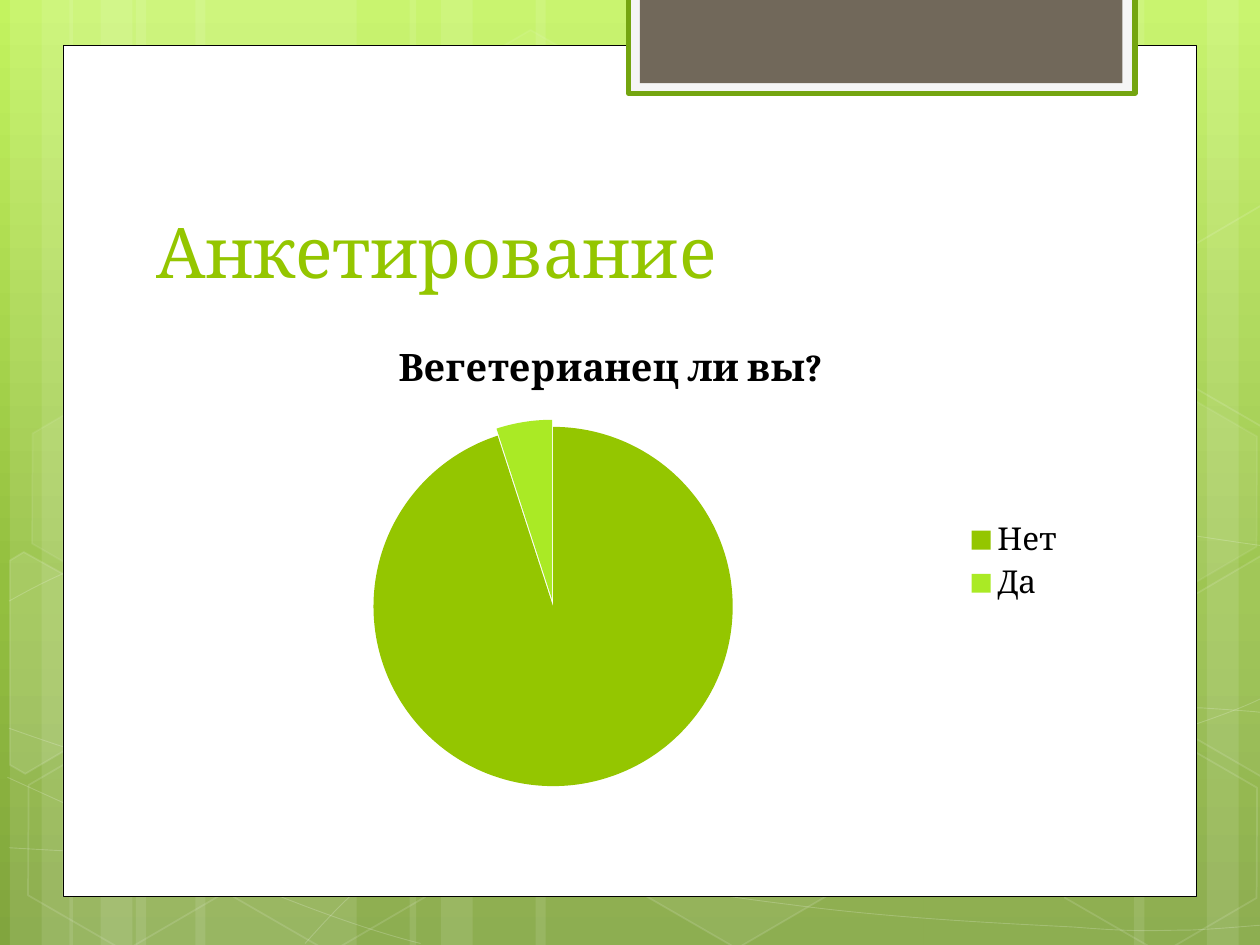
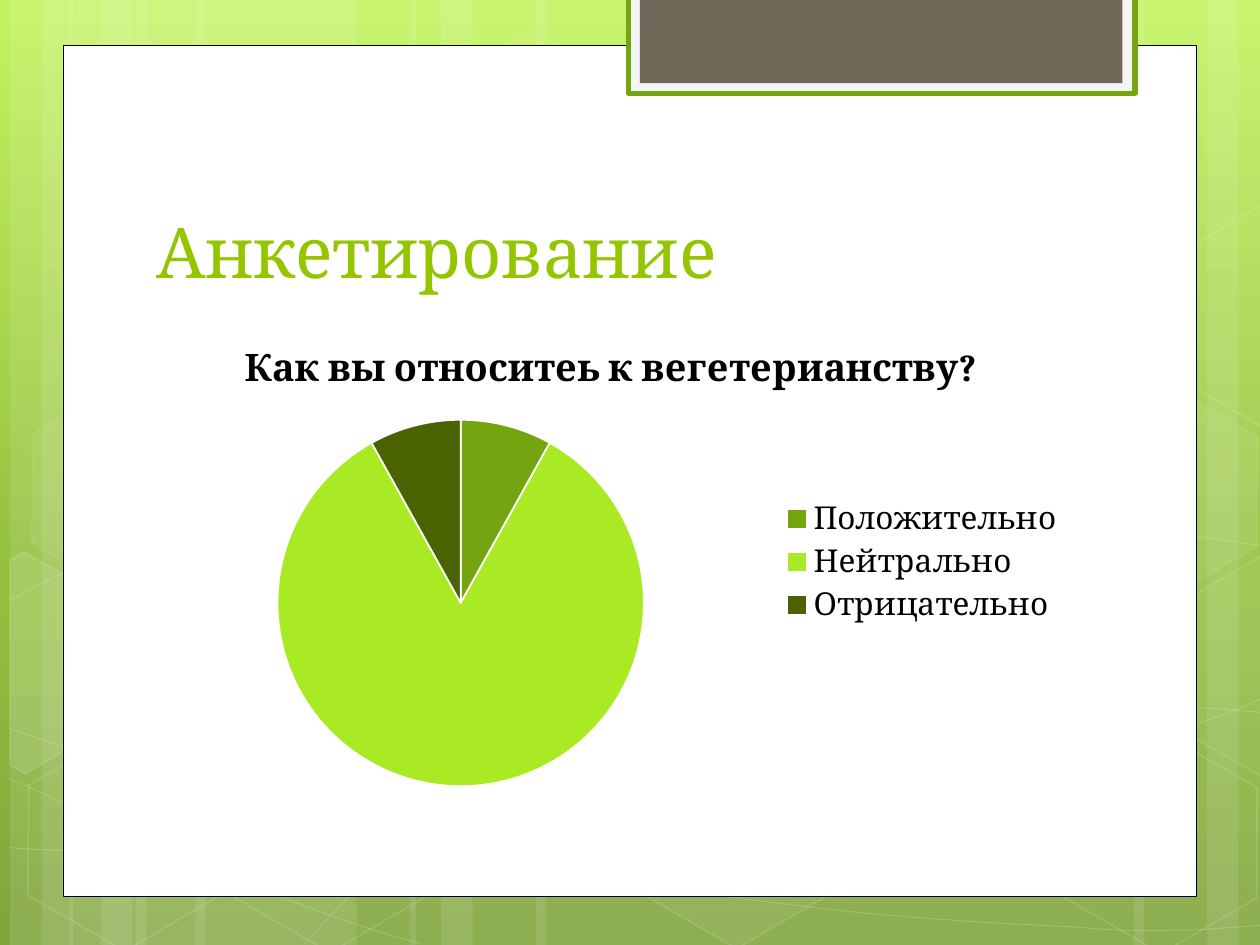
from copy import deepcopy
from dataclasses import dataclass

from lxml.etree import SubElement
from pptx import Presentation
from pptx.chart.data import CategoryChartData
from pptx.dml.color import RGBColor as Rgb
from pptx.enum.chart import XL_CHART_TYPE as ChartType, XL_LEGEND_POSITION as LegendPos
from pptx.enum.shapes import MSO_SHAPE as Preset
from pptx.enum.text import MSO_ANCHOR as Anchor
from pptx.oxml import parse_xml
from pptx.oxml.ns import nsdecls, qn
from pptx.util import Cm, Pt


@dataclass(frozen=True)
class Theme:
    """Colours, font and type sizes of the deck."""
    font: str = "Cambria"
    title_size: float = 40
    chart_title_size: float = 21.6
    chart_size: float = 18
    lime: str = "94C600"
    bright: str = "AAEA25"
    green: str = "74A510"
    dark: str = "4A6300"
    white: str = "FFFFFF"
    black: str = "000000"
    tab_edge: str = "F5F5F5"
    tab: str = "71685A"
    backdrop: tuple = ((0, "C3F35F"), (0.62, "93BF3F"), (1, "81A53E"))


THEME = Theme()
SLIDE_W, SLIDE_H = 25.4, 19.05

STRIPES = [
    (2.74, 4.45), (0.2, 1.27), (0.84, 2.11), (3.94, 4.45), (1.4, 1.27), (2.03, 2.11),
    (18.62, 4.45), (24.33, 1.27), (22.86, 2.11), (10.8, 7.82), (8.26, 1.27), (8.89, 2.11),
]
STRIPES_ALPHA = 10

WAVES = [
    [(0.18, 17.09), (1.55, 17.17), (2.92, 17.25), (4.83, 17.22), (6.73, 17.2),
     (9.09, 17.15), (11.63, 16.89), (14.17, 16.64), (17.78, 16.15), (20.12, 15.67),
     (22.43, 15.19), (24.82, 14.43), (25.58, 14)],
    [(0.18, 12.12), (0.91, 11.71), (1.65, 11.33), (3.07, 10.95), (4.52, 10.57),
     (6.58, 10.01), (8.81, 9.83), (11.07, 9.65), (13.82, 9.63), (16.61, 9.83),
     (19.41, 10.03), (24.05, 10.82), (25.58, 11.02)],
    [(0.15, 15.67), (3.23, 17.07), (6.27, 18.47), (8.48, 19.02)],
    [(0.18, 14.68), (0.97, 14.96), (1.78, 15.24), (3.25, 15.65), (4.72, 16.03),
     (6.93, 16.66), (9.07, 17.09), (11.18, 17.53), (13.84, 17.98), (15.95, 18.24),
     (18.06, 18.52), (20.32, 18.62), (21.67, 18.69), (22.99, 18.8), (23.34, 18.75),
     (24, 18.75), (24.66, 18.72), (25.12, 18.67), (25.58, 18.64)],
    [(6.15, 19.02), (6.6, 18.52), (7.06, 18.01), (7.67, 17.55), (8.28, 17.09),
     (9.14, 16.59), (9.86, 16.23), (10.57, 15.88), (11, 15.72), (11.94, 15.47),
     (12.85, 15.21), (14.55, 14.86), (15.44, 14.68), (16.36, 14.5), (16.48, 14.5),
     (17.27, 14.45), (18.06, 14.38), (19.3, 14.3), (20.17, 14.27), (21.06, 14.25),
     (22.5, 14.27), (22.5, 14.27), (22.5, 14.27), (24.21, 14.27), (24.21, 14.27),
     (24.66, 14.3), (25.1, 14.33), (25.32, 14.35), (25.55, 14.38), (25.48, 14.35),
     (25.55, 14.38)],
]

HEXAGONS = [
    (8.48, 0.91, 4, 8), (12.62, 14.96, 6, 12), (0.28, 15.01, 0, 12), (0.36, 7.92, 7, 8),
    (4.42, 15.04, 0, 12), (19.13, 11.51, 10, 12), (21.18, 15.06, 0, 12), (21.18, 7.98, 7, 8),
]

CUT_HEXAGONS = [
    (10, [(0.2, 11.3), (0.48, 11.13), (2.44, 12.22), (2.41, 14.48), (0.51, 15.6),
          (0.2, 15.42)]),
    (4, [(23.52, 12.32), (25.43, 11.2), (25.63, 11.33), (25.63, 15.57), (25.45, 15.67),
         (23.52, 14.55)]),
    (0, [(23.52, 5.26), (25.43, 4.14), (25.65, 4.27), (25.63, 8.51), (25.45, 8.61),
         (23.52, 7.49)]),
]


def set_alpha(shape, place, percent):
    """Make the solid colour found at a place in the shape translucent."""
    for colour in shape._element.xpath(f"./p:spPr/{place}a:solidFill/a:srgbClr"):
        SubElement(colour, qn("a:alpha")).set("val", str(percent * 1000))


def paint(shape, fill=None, fill_alpha=100, line=None, line_width=1, line_alpha=100):
    """Give a shape its fill and outline, and take its shadow away."""
    shape.shadow.inherit = False
    if fill and fill_alpha:
        shape.fill.solid()
        shape.fill.fore_color.rgb = Rgb.from_string(fill)
        if fill_alpha < 100:
            set_alpha(shape, "", fill_alpha)
    else:
        shape.fill.background()
    if line:
        shape.line.color.rgb = Rgb.from_string(line)
        shape.line.width = Pt(line_width)
        if line_alpha < 100:
            set_alpha(shape, "a:ln/", line_alpha)
    else:
        shape.line.fill.background()


def add_box(slide, left, top, width, height, preset=Preset.RECTANGLE, **look):
    """Add a painted preset shape."""
    box = slide.shapes.add_shape(preset, Cm(left), Cm(top), Cm(width), Cm(height))
    paint(box, **look)
    return box


def add_outline(slide, points, close, **look):
    """Add a painted freeform through the points."""
    start, *rest = [(Cm(x), Cm(y)) for x, y in points]
    builder = slide.shapes.build_freeform(*start)
    builder.add_line_segments(rest, close=close)
    outline = builder.convert_to_shape()
    paint(outline, **look)
    return outline


def add_wave(slide, points):
    """Add a faint curve whose points are Bézier controls, three to a segment."""
    wave = add_outline(slide, points, False, line=THEME.white, line_width=0.5, line_alpha=20)
    steps = wave._element.xpath(".//a:lnTo")
    for first in range(0, len(steps), 3):
        bend = parse_xml(f"<a:cubicBezTo {nsdecls('a')}/>")
        steps[first].addprevious(bend)
        for step in steps[first:first + 3]:
            bend.append(step[0])
            step.getparent().remove(step)


def add_hexagon(slide, left, top, fill_alpha, line_alpha):
    """Add a translucent hexagon standing on its corner."""
    hexagon = add_box(slide, left, top, 4.45, 3.86, Preset.HEXAGON, fill=THEME.white,
                      fill_alpha=fill_alpha, line=THEME.white, line_alpha=line_alpha)
    hexagon.adjustments[0] = 0.285
    hexagon.rotation = 30


def set_backdrop(slide):
    """Fill the slide with the vertical green gradient."""
    fill = slide.background.fill
    fill.gradient()
    fill.gradient_angle = 270
    stops = slide._element.xpath(".//a:gsLst")[0]
    stops.append(deepcopy(stops[0]))
    for stop, (position, colour) in zip(fill.gradient_stops, THEME.backdrop):
        stop.position = position
        stop.color.rgb = Rgb.from_string(colour)


def add_decor(slide):
    """Draw the backdrop, the white page and the tab at its top."""
    set_backdrop(slide)
    for left, width in STRIPES:
        add_box(slide, left, 0, width, SLIDE_H, fill=THEME.white, fill_alpha=STRIPES_ALPHA)
    for wave in WAVES:
        add_wave(slide, wave)
    for hexagon in HEXAGONS:
        add_hexagon(slide, *hexagon)
    for fill_alpha, corners in CUT_HEXAGONS:
        add_outline(slide, corners, True, fill=THEME.white, fill_alpha=fill_alpha,
                    line=THEME.white, line_alpha=12)
    add_box(slide, 1.27, 0.91, 22.86, 17.17, fill=THEME.white, line=THEME.black,
            line_width=0.5)
    add_box(slide, 12.67, -0.05, 10.21, 1.93, fill=THEME.tab_edge, line=THEME.green,
            line_width=3)
    add_box(slide, 12.9, -0.05, 9.73, 1.73, fill=THEME.tab)


def style_font(font, size, colour, bold=False):
    """Set the deck font with a size, colour and weight."""
    font.name = THEME.font
    font.size = Pt(size)
    font.bold = bold
    font.color.rgb = Rgb.from_string(colour)


def add_title(slide, wording):
    """Add the slide title."""
    title = slide.shapes.add_textbox(Cm(2.9), Cm(2.84), Cm(19.51), Cm(3.18)).text_frame
    title.word_wrap = True
    title.vertical_anchor = Anchor.BOTTOM
    run = title.paragraphs[0].add_run()
    run.text = wording
    style_font(run.font, THEME.title_size, THEME.lime)


def add_pie(slide, question, answers, explosion=0, border=0):
    """Add a pie chart of (answer, share, colour) rows."""
    data = CategoryChartData()
    data.categories = [answer for answer, _, _ in answers]
    data.add_series(question, [share for _, share, _ in answers])
    chart = slide.shapes.add_chart(ChartType.PIE, Cm(2.9), Cm(6.45), Cm(18.82), Cm(9.75),
                                   data).chart
    style_font(chart.font, THEME.chart_size, THEME.black)

    chart.has_title = True
    run = chart.chart_title.text_frame.paragraphs[0].add_run()
    run.text = question
    style_font(run.font, THEME.chart_title_size, THEME.black, bold=True)
    chart.chart_title.include_in_layout = False

    chart.has_legend = True
    chart.legend.position = LegendPos.RIGHT
    chart.legend.include_in_layout = False
    style_font(chart.legend.font, THEME.chart_size, THEME.black)

    pie = chart.plots[0]
    pie.vary_by_categories = True
    series = pie.series[0]
    if explosion:
        series._element.find(qn("c:tx")).addnext(
            parse_xml(f'<c:explosion {nsdecls("c")} val="{explosion}"/>'))
    for index, (_, _, colour) in enumerate(answers):
        wedge = series.points[index].format
        wedge.fill.solid()
        wedge.fill.fore_color.rgb = Rgb.from_string(colour)
        if border:
            wedge.line.color.rgb = Rgb.from_string(THEME.white)
            wedge.line.width = Pt(border)
        else:
            wedge.line.fill.background()


def add_survey_slide(deck, question, answers, **pie_look):
    """Add one survey slide with its pie chart."""
    slide = deck.slides.add_slide(deck.slide_layouts[6])
    add_decor(slide)
    add_title(slide, "Анкетирование")
    add_pie(slide, question, answers, **pie_look)


def main():
    """Build the deck and save it."""
    deck = Presentation()
    deck.slide_width, deck.slide_height = Cm(SLIDE_W), Cm(SLIDE_H)
    add_survey_slide(deck, "Вегетерианец ли вы?", [
        ("Нет", 95, THEME.lime),
        ("Да", 5, THEME.bright),
    ], explosion=2)
    add_survey_slide(deck, "Как вы относитеь к вегетерианству?", [
        ("Положительно", 8, THEME.green),
        ("Нейтрально", 83, THEME.bright),
        ("Отрицательно", 8, THEME.dark),
    ], border=1)
    deck.save("out.pptx")


if __name__ == "__main__":
    main()
